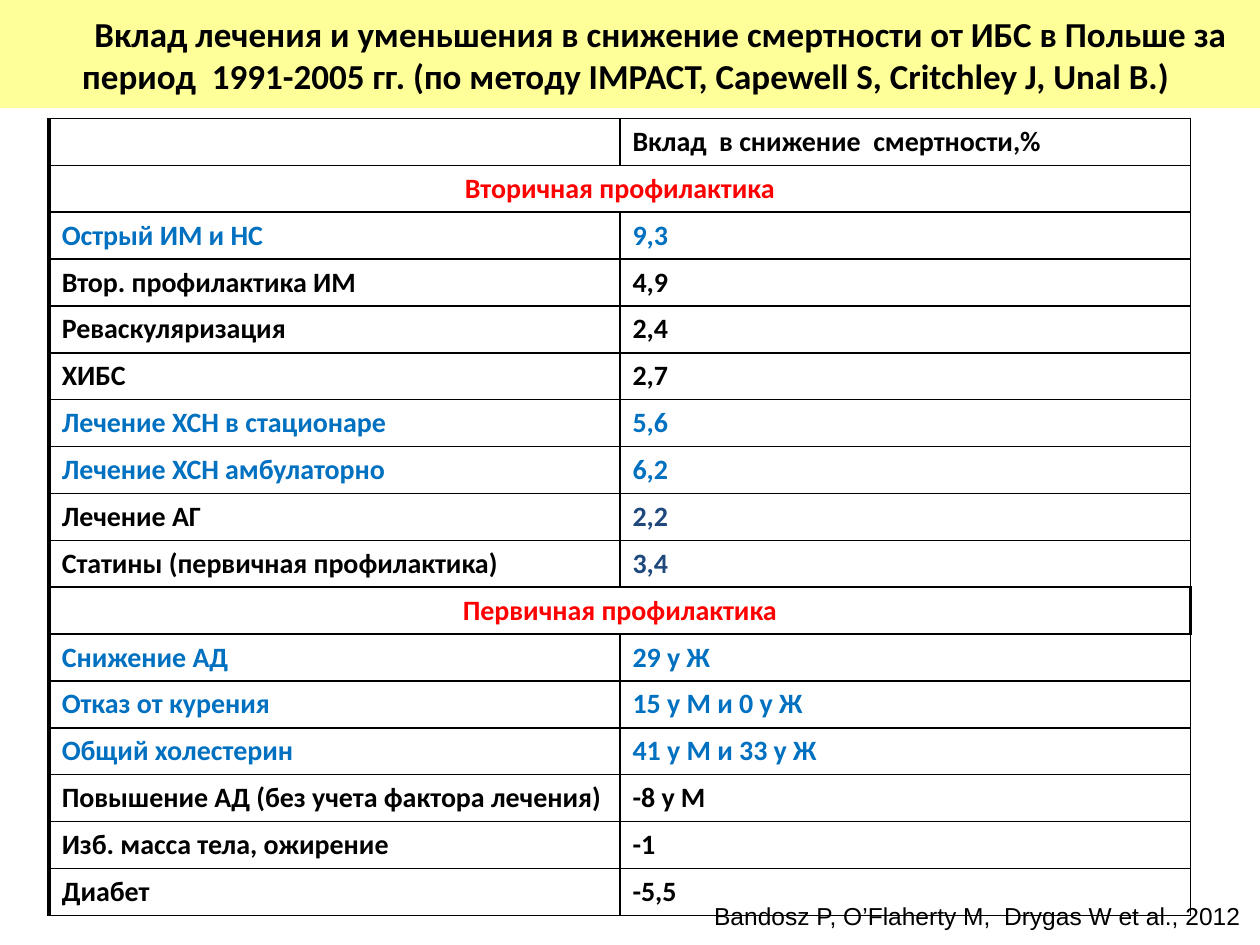
from dataclasses import dataclass

from lxml import etree
from pptx import Presentation
from pptx.dml.color import RGBColor
from pptx.enum import shapes, text
from pptx.oxml import ns
from pptx.util import Inches, Pt

BLACK = RGBColor(0x00, 0x00, 0x00)
RED = RGBColor(0xFF, 0x00, 0x00)
BLUE = RGBColor(0x00, 0x70, 0xC0)
NAVY = RGBColor(0x1F, 0x49, 0x7D)
PALE_YELLOW = RGBColor(0xFF, 0xFF, 0x99)

TITLE_FORMAT = {"name": "Calibri", "size": Pt(20), "bold": True}
CELL_FORMAT = {"name": "Calibri", "size": Pt(16), "bold": True}
SOURCE_FORMAT = {"name": "Arial", "size": Pt(14), "bold": False}

THIN, THICK = Pt(1), Pt(2.25)
ROW_HEIGHT = Inches(0.37)
COLUMN_WIDTH = Inches(4.53)


@dataclass
class Row:
    label: str
    value: str = ""
    color: RGBColor = BLACK
    value_color: RGBColor | None = None
    is_section: bool = False
    right_border: int = THIN


ROWS = [
    Row("", "Вклад  в снижение  смертности,%"),
    Row("Вторичная профилактика", color=RED, is_section=True),
    Row("Острый ИМ и НС", "9,3", BLUE),
    Row("Втор. профилактика ИМ", "4,9"),
    Row("Реваскуляризация", "2,4"),
    Row("ХИБС", "2,7"),
    Row("Лечение ХСН в стационаре", "5,6", BLUE),
    Row("Лечение ХСН амбулаторно", "6,2", BLUE),
    Row("Лечение АГ", "2,2", value_color=NAVY),
    Row("Статины (первичная профилактика)", "3,4", value_color=NAVY),
    Row("Первичная профилактика", color=RED, is_section=True, right_border=THICK),
    Row("Снижение АД", "29 у Ж", BLUE),
    Row("Отказ от курения", "15 у М и 0 у Ж", BLUE),
    Row("Общий холестерин", "41 у М и 33 у Ж", BLUE),
    Row("Повышение АД (без учета фактора лечения)", "-8 у М"),
    Row("Изб. масса тела, ожирение", "-1"),
    Row("Диабет", "-5,5"),
]


def write(paragraph, content: str, values: dict, color: RGBColor, alignment) -> None:
    """Fill a paragraph with one formatted run."""
    paragraph.alignment = alignment
    if not content:
        # The end mark sets the height of an empty cell
        end_mark = etree.SubElement(paragraph._p, ns.qn("a:endParaRPr"))
        end_mark.set("sz", str(int(values["size"].pt * 100)))
        return
    run = paragraph.add_run()
    run.text = content
    for name, value in values.items():
        setattr(run.font, name, value)
    run.font.color.rgb = color


def draw_borders(cell, widths: dict[str, int]) -> None:
    """Draw black cell borders; lines must come before the cell fill."""
    properties = cell._tc.get_or_add_tcPr()
    for index, (side, width) in enumerate(widths.items()):
        line = etree.Element(ns.qn(f"a:ln{side}"), w=str(int(width)))
        fill = etree.SubElement(line, ns.qn("a:solidFill"))
        etree.SubElement(fill, ns.qn("a:srgbClr"), val=str(BLACK))
        properties.insert(index, line)


def draw_table(slide, rows: list[Row]) -> None:
    frame = slide.shapes.add_table(len(rows), 2, Inches(0.39), Inches(0.94),
                                   2 * COLUMN_WIDTH, len(rows) * ROW_HEIGHT)
    table = frame.table
    table.first_row = table.horz_banding = False
    for column in table.columns:
        column.width = COLUMN_WIDTH
    for index, row in enumerate(rows):
        table.rows[index].height = ROW_HEIGHT
        label_cell, value_cell = table.cell(index, 0), table.cell(index, 1)
        if row.is_section:
            label_cell.merge(value_cell)
        alignment = text.PP_ALIGN.CENTER if row.is_section else text.PP_ALIGN.LEFT
        label_right = row.right_border if row.is_section else THIN
        for cell, content, color, left, right in (
            (label_cell, row.label, row.color, THICK, label_right),
            (value_cell, row.value, row.value_color or row.color, THIN, row.right_border),
        ):
            write(cell.text_frame.paragraphs[0], content, CELL_FORMAT, color, alignment)
            cell.fill.background()
            draw_borders(cell, {"L": left, "R": right, "T": THIN, "B": THIN})


def draw_title(slide) -> None:
    banner = slide.shapes.add_shape(shapes.MSO_SHAPE.RECTANGLE, 0, 0,
                                    Inches(10), Inches(0.86))
    banner.shadow.inherit = False
    banner.fill.solid()
    banner.fill.fore_color.rgb = PALE_YELLOW
    banner.line.fill.background()
    banner.text_frame.word_wrap = True
    banner.text_frame.vertical_anchor = text.MSO_ANCHOR.MIDDLE
    paragraph = banner.text_frame.paragraphs[0]
    write(paragraph,
          "Вклад лечения и уменьшения в снижение смертности от ИБС в Польше за "
          "период  1991-2005 гг. (по методу IMPACT, Capewell S, Critchley J, Unal B.) ",
          TITLE_FORMAT, BLACK, text.PP_ALIGN.CENTER)
    paragraph._p.get_or_add_pPr().set("indent", str(Inches(0.49)))


def draw_source(slide) -> None:
    box = slide.shapes.add_textbox(Inches(3.83), Inches(7.1), Inches(6.17), Inches(0.34))
    box.text_frame.word_wrap = True
    write(box.text_frame.paragraphs[0], "Bandosz P, O’Flaherty M,  Drygas W et al., 2012 ",
          SOURCE_FORMAT, BLACK, text.PP_ALIGN.RIGHT)


def main() -> None:
    presentation = Presentation()
    presentation.slide_width, presentation.slide_height = Inches(10), Inches(7.5)
    slide = presentation.slides.add_slide(presentation.slide_layouts[6])

    # Contribution table, title banner and citation
    draw_table(slide, ROWS)
    draw_title(slide)
    draw_source(slide)
    presentation.save("out.pptx")


if __name__ == "__main__":
    main()
